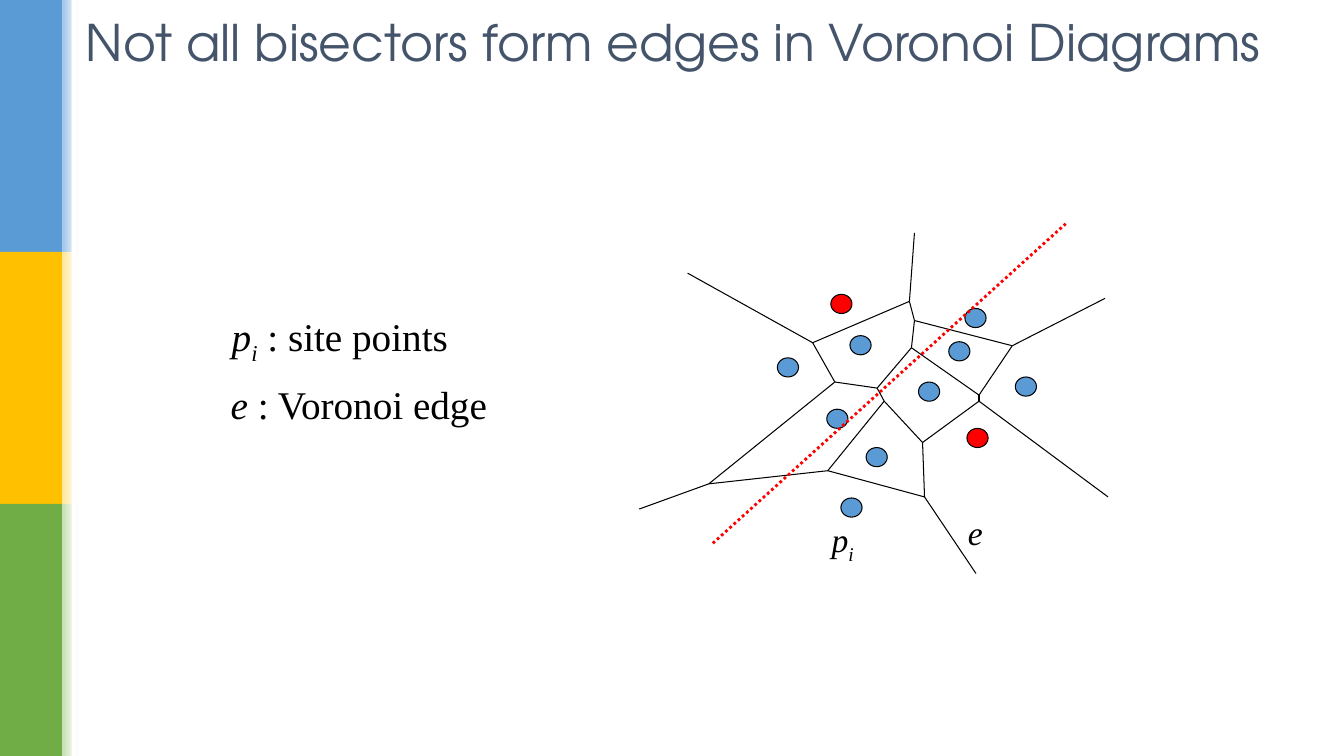
from lxml import etree
from pptx import Presentation
from pptx.dml.color import RGBColor
from pptx.enum.dml import MSO_LINE
from pptx.enum.shapes import MSO_CONNECTOR, MSO_SHAPE
from pptx.enum.text import MSO_ANCHOR
from pptx.oxml.ns import qn
from pptx.util import Inches, Pt

RECTANGLE = MSO_SHAPE.RECTANGLE
ELLIPSE = MSO_SHAPE.OVAL
STRAIGHT = MSO_CONNECTOR.STRAIGHT
DOTTED = MSO_LINE.ROUND_DOT
MIDDLE = MSO_ANCHOR.MIDDLE

TITLE_FONT, MATH_FONT = "TeX Gyre Adventor", "Times New Roman"
BLACK, WHITE, RED, BLUE, SLATE = "000000", "FFFFFF", "FF0000", "5B9BD5", "44546A"

# Sidebar bands from top to bottom: solid colour, start of the fading strip
BANDS = [(BLUE, "9DC3E6"), ("FFC000", "FFE699"), ("70AD47", "C5E0B4")]
BAND_HEIGHT = 2.5

# Voronoi vertices (A to N) and the outer ends of the open edges (U to Z)
VERTICES = {
    "A": (8.06, 3.4), "B": (8.28, 3.79), "C": (7.03, 4.8), "D": (8.21, 4.67),
    "E": (8.77, 3.98), "F": (8.7, 3.85), "G": (9.04, 3.45), "H": (9.71, 3.92),
    "I": (9.71, 3.98), "J": (9.15, 4.39), "K": (9.17, 4.93), "L": (9.07, 3.18),
    "M": (9.02, 2.99), "N": (10.04, 3.43),
    "U": (6.82, 2.71), "V": (6.34, 5.05), "W": (9.68, 5.69),
    "X": (10.99, 4.93), "Y": (10.96, 2.96), "Z": (9.07, 2.31),
}
EDGES = ("LM FE FG JI IH UA AB BC CV CD DE BF GH EJ DK KJ GL AM "
         "KW IX LN HN NY MZ").split()

# Left and top of each site point
SITES = [(8.34, 4.94), (8.59, 4.44), (9.11, 3.79), (10.07, 3.74), (9.41, 3.39),
         (9.57, 3.06), (8.2, 4.06), (7.71, 3.55), (8.43, 3.33)]
BISECTED_SITES = [(9.59, 4.25), (8.24, 2.92)]


def color(hex_value):
    return RGBColor.from_string(hex_value)


def add_filled(page, kind, left, top, width, height, fill, outline=None):
    shape = page.shapes.add_shape(
        kind, Inches(left), Inches(top), Inches(width), Inches(height))
    shape.shadow.inherit = False
    shape.fill.solid()
    shape.fill.fore_color.rgb = color(fill)
    if outline:
        shape.line.color.rgb = color(outline)
        shape.line.width = Pt(0.75)
    else:
        shape.line.fill.background()
    return shape


def add_sidebar(page):
    for row, (solid, pale) in enumerate(BANDS):
        top = row * BAND_HEIGHT
        add_filled(page, RECTANGLE, 0, top, 0.62, BAND_HEIGHT, solid)
        strip = add_filled(page, RECTANGLE, 0.62, top, 0.16, BAND_HEIGHT, pale)
        strip.fill.gradient()
        strip.fill.gradient_angle = 0
        for stop, shade in zip(strip.fill.gradient_stops, (pale, WHITE)):
            stop.color.rgb = color(shade)
    add_filled(page, RECTANGLE, 0.71, 0, 0.05, 7.5, WHITE)


def add_line(page, start, end, stroke=BLACK, width=0.75, dash=None):
    line = page.shapes.add_connector(STRAIGHT, *map(Inches, start + end))
    line.line.color.rgb = color(stroke)
    line.line.width = Pt(width)
    if dash:
        line.line.dash_style = dash
    etree.SubElement(line._element.spPr, qn("a:effectLst"))


def add_site(page, place, fill):
    add_filled(page, ELLIPSE, *place, 0.21, 0.19, fill, BLACK)


def add_text(page, left, top, width, height, size, spans,
             font=MATH_FONT, ink=BLACK, wrap=False):
    """Each span is (text, style), the style being "", "italic" or "subscript"."""
    box = page.shapes.add_textbox(
        Inches(left), Inches(top), Inches(width), Inches(height))
    box.text_frame.word_wrap = wrap
    para = box.text_frame.paragraphs[0]
    para.font.name = font
    para.font.size = Pt(size)
    para.font.color.rgb = color(ink)
    for text, style in spans:
        span = para.add_run()
        span.text = text
        if style:
            span.font.italic = True
        if style == "subscript":
            span._r.get_or_add_rPr().set("baseline", "-25000")
    return box


def main():
    deck = Presentation()
    deck.slide_width, deck.slide_height = Inches(13.33), Inches(7.5)
    page = deck.slides.add_slide(deck.slide_layouts[6])

    # Sidebar and title
    add_sidebar(page)
    title = add_text(page, 0.75, 0, 11.97, 0.82, 36,
                     [("Not all bisectors form edges in Voronoi Diagrams", "")],
                     TITLE_FONT, SLATE, wrap=True)
    title.text_frame.vertical_anchor = MIDDLE

    # Voronoi diagram
    for start, end in EDGES:
        add_line(page, VERTICES[start], VERTICES[end])
    for place in SITES:
        add_site(page, place, BLUE)
    for place in BISECTED_SITES:
        add_site(page, place, RED)

    # Diagram labels and legend
    edge, site = [("e", "italic")], [("p", "italic"), ("i", "subscript")]
    add_text(page, 9.5, 5.03, 0.35, 0.5, 24, edge)
    add_text(page, 8.15, 5.1, 0.43, 0.5, 24, site)
    add_text(page, 2.2, 3.05, 2.36, 0.57, 28, site + [(" : site points", "")])
    add_text(page, 2.19, 3.72, 2.8, 0.57, 28, edge + [(" : Voronoi edge", "")])

    # Bisector of the two red sites
    add_line(page, (7.07, 5.39), (10.57, 2.22), RED, 2, DOTTED)

    deck.save("out.pptx")


if __name__ == "__main__":
    main()
